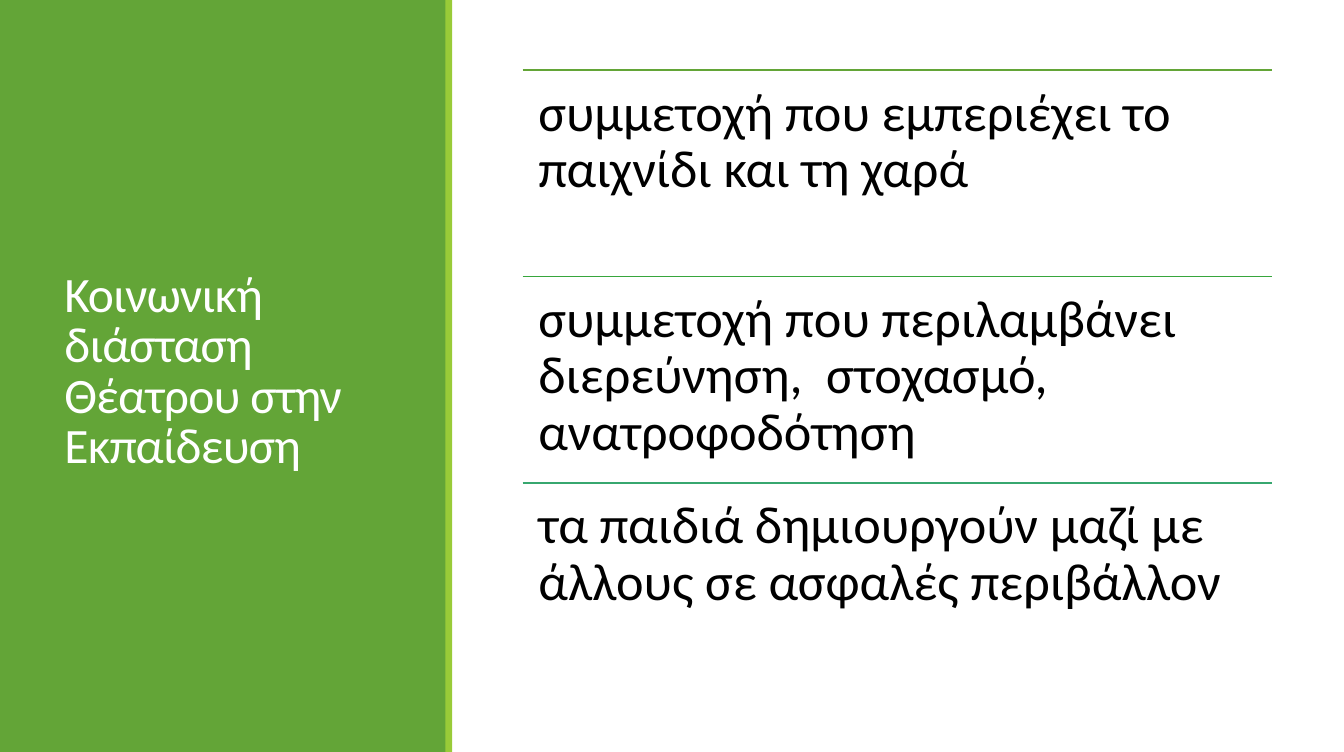
"""Build the slide on the social dimension of theatre in education."""
from pptx import Presentation
from pptx.dml.color import RGBColor
from pptx.enum import shapes, text
from pptx.oxml import parse_xml
from pptx.oxml.ns import nsdecls
from pptx.util import Pt

WHITE = RGBColor(0xFF, 0xFF, 0xFF)
BLACK = RGBColor(0, 0, 0)
GREEN = RGBColor(0x63, 0xA5, 0x37)
LIME = RGBColor(0x99, 0xCB, 0x38)
LEAF = RGBColor(0x37, 0xA6, 0x3D)
TEAL = RGBColor(0x37, 0xA7, 0x6F)

TITLE = ["Κοινωνική διάσταση", "Θέατρου στην Εκπαίδευση"]
POINTS = [
    ("συμμετοχή που εμπεριέχει το παιχνίδι και τη χαρά", GREEN),
    ("συμμετοχή που περιλαμβάνει διερεύνηση,  στοχασμό,  ανατροφοδότηση", LEAF),
    ("τα παιδιά δημιουργούν μαζί με άλλους σε ασφαλές περιβάλλον", TEAL),
]

WIDTH, HEIGHT = 977.76, 547.2
LIST_LEFT, LIST_TOP, LIST_WIDTH, ROW_HEIGHT = 380.2, 51.2, 545.4, 150.1
INSET = 11.4


def add_run(paragraph, words, size, color):
    run = paragraph.add_run()
    run.text = words
    run.font.name = "Calibri"
    run.font.size = Pt(size)
    run.font.color.rgb = color
    return run


def add_band(slide, left, width, color):
    band = slide.shapes.add_shape(
        shapes.MSO_SHAPE.RECTANGLE, Pt(left), 0, Pt(width), Pt(HEIGHT))
    band.shadow.inherit = False
    band.fill.solid()
    band.fill.fore_color.rgb = color
    band.line.fill.background()
    return band


def format_title(title):
    title.left, title.top, title.width, title.height = Pt(39.6), Pt(41), Pt(247.7), Pt(460.8)
    frame = title.text_frame
    frame.word_wrap = True
    frame.auto_size = text.MSO_AUTO_SIZE.NONE
    frame.vertical_anchor = text.MSO_ANCHOR.MIDDLE
    paragraph = frame.paragraphs[0]
    paragraph.alignment = text.PP_ALIGN.LEFT
    paragraph.line_spacing = 0.85
    for index, words in enumerate(TITLE):
        if index:
            paragraph.add_line_break()
        run = add_run(paragraph, words, 36, WHITE)
        run.font._element.set("spc", "-50")


def add_point(slide, top, words, color):
    rule = slide.shapes.add_connector(
        shapes.MSO_CONNECTOR.STRAIGHT,
        Pt(LIST_LEFT), Pt(top), Pt(LIST_LEFT + LIST_WIDTH), Pt(top))
    rule.line.color.rgb = color
    rule.line.width = Pt(1.25)
    rule._element.spPr.append(parse_xml(f"<a:effectLst {nsdecls('a')}/>"))

    point = slide.shapes.add_textbox(
        Pt(LIST_LEFT), Pt(top), Pt(LIST_WIDTH), Pt(ROW_HEIGHT))
    frame = point.text_frame
    frame.word_wrap = True
    frame.margin_left = frame.margin_right = Pt(INSET)
    frame.margin_top = frame.margin_bottom = Pt(INSET)
    paragraph = frame.paragraphs[0]
    paragraph.line_spacing = 0.9
    add_run(paragraph, words, 38, BLACK)


def main():
    deck = Presentation()
    deck.slide_width, deck.slide_height = Pt(WIDTH), Pt(HEIGHT)
    slide = deck.slides.add_slide(deck.slide_layouts[5])
    title = slide.shapes.title
    panel = add_band(slide, 0, 324.7, GREEN)
    title._element.addprevious(panel._element)
    format_title(title)
    add_band(slide, 324, 5, LIME)
    for row, (words, color) in enumerate(POINTS):
        add_point(slide, LIST_TOP + row * ROW_HEIGHT, words, color)
    deck.save("out.pptx")


if __name__ == "__main__":
    main()
